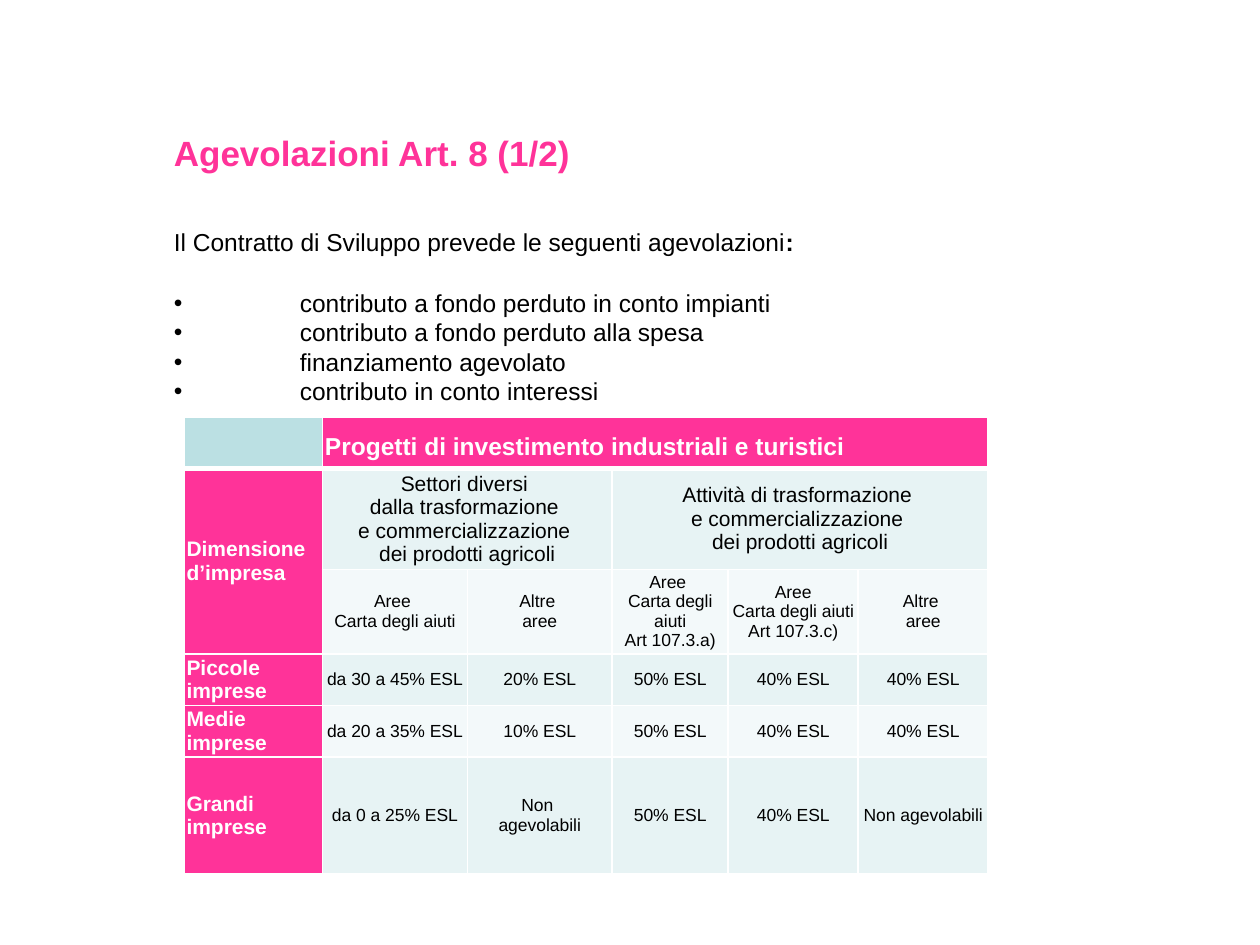
import copy

import pptx
import pptx.dml.color
import pptx.enum.text
import pptx.oxml
import pptx.oxml.ns
import pptx.util
from pptx.util import Cm

PINK = pptx.dml.color.RGBColor(0xFF, 0x33, 0x99)
TEAL = pptx.dml.color.RGBColor(0xBB, 0xE0, 0xE3)
BAND_DARK = pptx.dml.color.RGBColor(0xE7, 0xF3, 0xF4)
BAND_LIGHT = pptx.dml.color.RGBColor(0xF3, 0xF9, 0xFA)
WHITE = pptx.dml.color.RGBColor(0xFF, 0xFF, 0xFF)
BLACK = pptx.dml.color.RGBColor(0, 0, 0)
FONT = "Arial"
ALIGN = pptx.enum.text.PP_ALIGN
ANCHOR = pptx.enum.text.MSO_ANCHOR

BENEFITS = [
    "contributo a fondo perduto in conto impianti",
    "contributo a fondo perduto alla spesa",
    "finanziamento agevolato",
    "contributo in conto interessi",
]

COLUMN_WIDTHS = [2.79, 2.92, 2.92, 2.34, 2.62, 2.62]
ROW_HEIGHTS = [1.04, 2.03, 1.7, 1.04, 1.04, 2.36]
# First row, first column, last row, last column
MERGES = [(0, 1, 0, 5), (1, 0, 2, 0), (1, 1, 1, 2), (1, 3, 1, 5)]
# A list in a cell holds several paragraphs
ROWS = [
    [None, "Progetti di investimento industriali e turistici", None, None, None, None],
    ["Dimensione \nd’impresa",
     "Settori diversi \ndalla trasformazione \ne commercializzazione \ndei prodotti agricoli", None,
     "Attività di trasformazione \ne commercializzazione \ndei prodotti agricoli", None, None],
    [None, "Aree \nCarta degli aiuti", "Altre \naree",
     ["Aree \nCarta degli aiuti", "Art 107.3.a)"],
     ["Aree", "Carta degli aiuti", "Art 107.3.c)"], "Altre \naree"],
    ["Piccole imprese", "da 30 a 45% ESL", "20% ESL", "50% ESL", "40% ESL", "40% ESL"],
    ["Medie imprese", "da 20 a 35% ESL", "10% ESL", "50% ESL", "40% ESL", "40% ESL"],
    ["Grandi imprese", "da 0 a 25% ESL", "Non \nagevolabili", "50% ESL", "40% ESL",
     "Non agevolabili"],
]


def add_text(para, text, size=14, color=BLACK, bold=False, align=ALIGN.LEFT):
    """Add text to a paragraph; a newline becomes a line break of the same format."""
    para.alignment = align
    for number, line in enumerate(text.split("\n")):
        if number:
            para.add_line_break()
        span = para.add_run()
        span.text = line
        span.font.name = FONT
        span.font.size = pptx.util.Pt(size)
        span.font.bold = bold
        span.font.color.rgb = color
    for line_break in para._p.findall(pptx.oxml.ns.qn("a:br")):
        line_break.insert(0, copy.deepcopy(span.font._element))


def set_bullet(para, character=None, indent=0):
    properties = para._p.get_or_add_pPr()
    properties.set("marL", str(indent))
    properties.set("indent", str(-indent))
    tag = f'buChar char="{character}"' if character else "buNone"
    properties.append(pptx.oxml.parse_xml(f'<a:{tag} {pptx.oxml.ns.nsdecls("a")}/>'))


def set_borders(cell, bottom=1):
    properties = cell._tc.get_or_add_tcPr()
    for side, width in (("L", 1), ("R", 1), ("T", 1), ("B", bottom)):
        properties.append(pptx.oxml.parse_xml(
            f'<a:ln{side} {pptx.oxml.ns.nsdecls("a")} w="{pptx.util.Pt(width)}">'
            f'<a:solidFill><a:srgbClr val="{WHITE}"/></a:solidFill></a:ln{side}>'))


def place_placeholder(placeholder, left, top, width, height):
    placeholder.left, placeholder.top = left, top
    placeholder.width, placeholder.height = width, height
    frame = placeholder.text_frame
    frame.word_wrap = True
    frame.auto_size = pptx.enum.text.MSO_AUTO_SIZE.NONE
    frame.vertical_anchor = ANCHOR.TOP
    return frame


def fill_heading(page, left, top, width, height):
    # Title
    title = place_placeholder(page.shapes.title, left, top, width, Cm(1.5))
    add_text(title.paragraphs[0], "Agevolazioni Art. 8 (1/2)", size=20, color=PINK, bold=True)

    # Introduction and list of benefits
    offset = Cm(1.93)
    body = place_placeholder(page.placeholders[1], left, top + offset, width, height - offset)
    intro = body.paragraphs[0]
    set_bullet(intro)
    add_text(intro, "Il Contratto di Sviluppo prevede le seguenti agevolazioni")
    add_text(intro, ":", bold=True)
    for benefit in BENEFITS:
        para = body.add_paragraph()
        set_bullet(para, "•", Cm(2.54))
        add_text(para, benefit)
    for number, para in enumerate(body.paragraphs):
        para.line_spacing = pptx.util.Pt(16.8)
        para.space_before = pptx.util.Pt(18 if number == 1 else 0)


def cell_style(row, column):
    """Return the fill of a cell and the format of its text."""
    if row == 0:
        return (PINK if column else TEAL), dict(size=14, color=WHITE, bold=True)
    if column == 0:
        return PINK, dict(size=12, color=WHITE, bold=True)
    fill = BAND_DARK if row % 2 else BAND_LIGHT
    return fill, dict(size=12 if row == 1 else 10, align=ALIGN.CENTER)


def add_aid_table(page, left, top, width, height):
    table = page.shapes.add_table(len(ROWS), len(COLUMN_WIDTHS), left, top, width, height).table
    table.first_row = table.horz_banding = False
    for column, size in zip(table.columns, COLUMN_WIDTHS):
        column.width = Cm(size)
    for row, size in zip(table.rows, ROW_HEIGHTS):
        row.height = Cm(size)

    # Cells
    for row, texts in enumerate(ROWS):
        for column, text in enumerate(texts):
            cell = table.cell(row, column)
            fill, style = cell_style(row, column)
            set_borders(cell, bottom=1 if row else 3)
            cell.fill.solid()
            cell.fill.fore_color.rgb = fill
            cell.vertical_anchor = ANCHOR.MIDDLE
            cell.margin_left = cell.margin_right = Cm(0 if column == 4 else 0.05)
            cell.margin_top = Cm(0.03 if row else 0.19)
            cell.margin_bottom = Cm(0.03)
            if text is None:
                continue
            for number, part in enumerate([text] if isinstance(text, str) else text):
                frame = cell.text_frame
                para = frame.add_paragraph() if number else frame.paragraphs[0]
                add_text(para, part, **style)

    # Merged headings
    for first_row, first_column, last_row, last_column in MERGES:
        table.cell(first_row, first_column).merge(table.cell(last_row, last_column))


def main():
    deck = pptx.Presentation()
    deck.slide_width, deck.slide_height = Cm(25.4), Cm(19.05)
    page = deck.slides.add_slide(deck.slide_layouts[1])
    fill_heading(page, Cm(3.25), Cm(2.52), Cm(19.25), Cm(5.85))
    add_aid_table(page, Cm(3.71), Cm(8.41), Cm(sum(COLUMN_WIDTHS)), Cm(sum(ROW_HEIGHTS)))
    deck.save("out.pptx")


if __name__ == "__main__":
    main()
